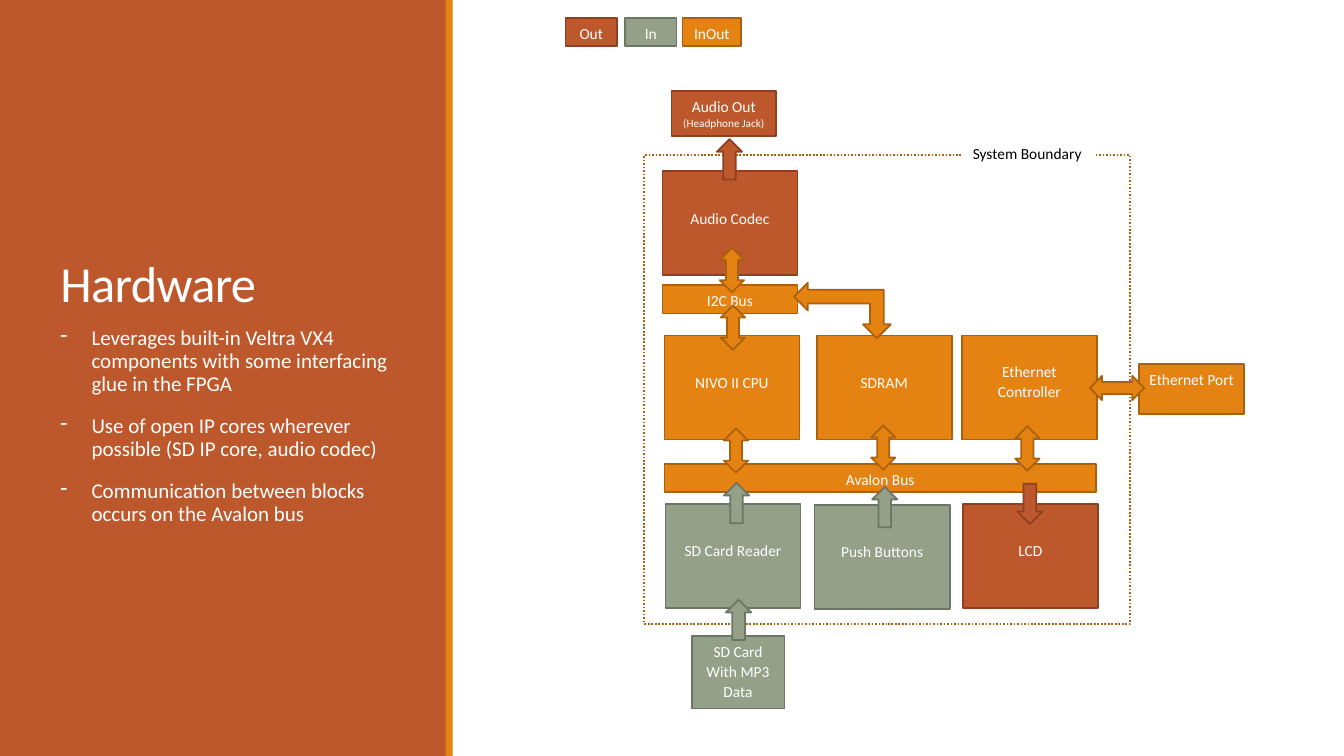
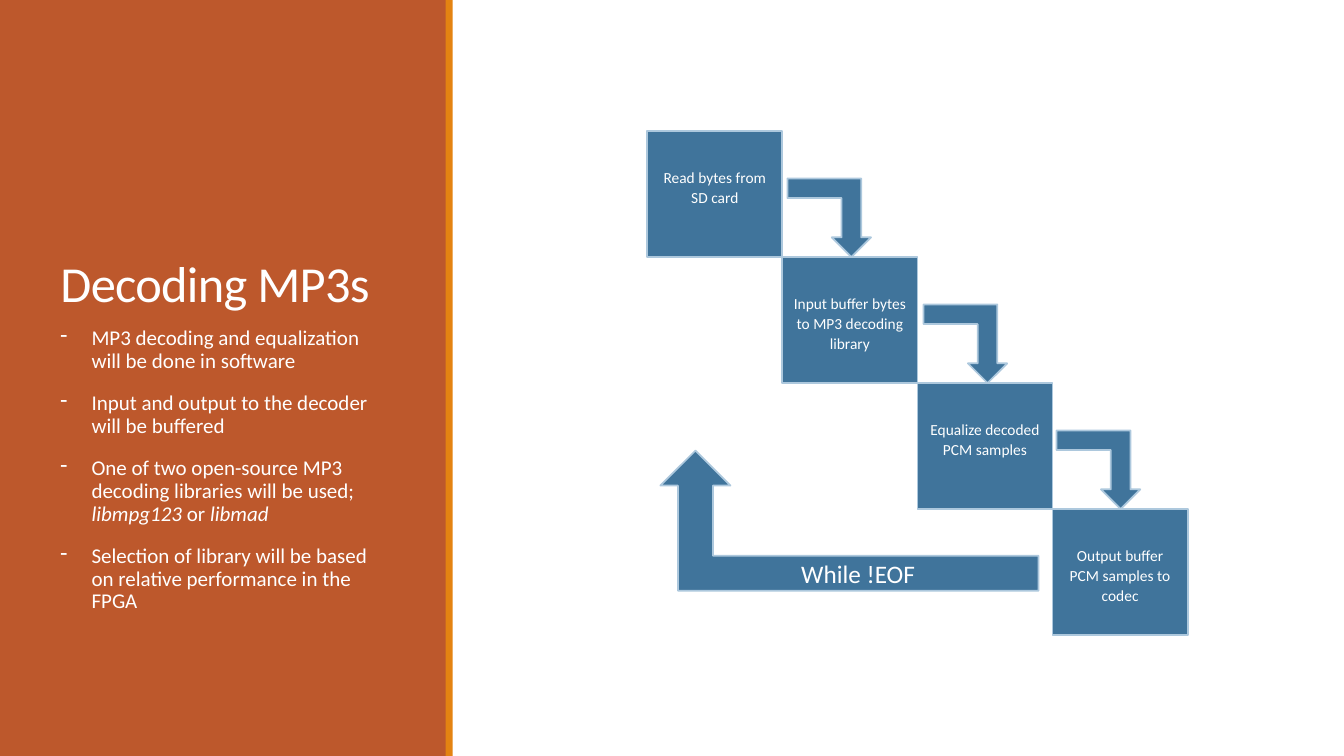
import pptx
import pptx.dml.color
import pptx.enum.dml
import pptx.enum.shapes
import pptx.enum.text
import pptx.oxml
import pptx.oxml.ns
import pptx.util

Inches = pptx.util.Inches
Pt = pptx.util.Pt
SHAPE = pptx.enum.shapes.MSO_SHAPE
ALIGN = pptx.enum.text.PP_ALIGN
ANCHOR = pptx.enum.text.MSO_ANCHOR

FONT = "Calibri"
WHITE, BLACK = "FFFFFF", "000000"
RUST, AMBER = "BD582C", "E48312"
OUT = (RUST, "8C4121")
IN = ("94A088", "6D7665")
INOUT = (AMBER, "A9610D")
STEP = ("40749B", "ADC8DD")

BLOCK_W, BLOCK_H, BUS_H = 1.34, 1.03, 0.28
BLOCK_TOP = 0.36

HARDWARE_POINTS = [
    ("Leverages built-in Veltra VX4 components with some interfacing glue in the FPGA",),
    ("Use of open IP cores wherever possible (SD IP core, audio codec)",),
    ("Communication between blocks occurs on the Avalon bus",),
]
DECODING_POINTS = [
    ("MP3 decoding and equalization will be done in software",),
    ("Input and output to the decoder will be buffered",),
    ("One of two open-source MP3 decoding libraries will be used; ", "libmpg123 ", "or ", "libmad"),
    ("Selection of library will be based on relative performance in the FPGA",),
]

BLOCKS = [
    ("NIVO II CPU", INOUT, 6.59, 3.33, BLOCK_TOP),
    ("SDRAM", INOUT, 8.1, 3.33, BLOCK_TOP),
    ("Ethernet Controller", INOUT, 9.54, 3.33, 0.25),
    ("Audio Codec", OUT, 6.57, 1.7, BLOCK_TOP),
    ("SD Card Reader", IN, 6.6, 5, BLOCK_TOP),
    ("Push Buttons", IN, 8.08, 5.01, BLOCK_TOP),
    ("LCD", OUT, 9.55, 5, BLOCK_TOP),
]
LABELS = [
    (["Avalon Bus"], INOUT, (6.59, 4.6, 4.28, BUS_H)),
    (["I2C Bus"], INOUT, (6.57, 2.83, BLOCK_W, BUS_H)),
    (["SD Card", "With MP3 Data"], IN, (6.86, 6.31, 0.92, 0.72)),
    (["Audio Out", "(Headphone Jack)"], OUT, (6.66, 0.9, 1.04, 0.45)),
    (["Ethernet Port"], INOUT, (11.3, 3.61, 1.04, 0.5)),
    (["Out"], OUT, (5.61, 0.18, 0.51, BUS_H)),
    (["In"], IN, (6.2, 0.18, 0.51, BUS_H)),
    (["InOut"], INOUT, (6.77, 0.18, 0.58, BUS_H)),
]
TWO_WAY_ARROWS = [(7.14, 2.46), (7.15, 3.03), (7.18, 4.25), (8.64, 4.22), (10.07, 4.23)]
ONE_WAY_ARROWS = [
    (OUT, 10.09, 4.8, 0),
    (OUT, 7.11, 1.38, 180),
    (IN, 8.65, 4.83, 180),
    (IN, 7.18, 4.79, 180),
    (IN, 7.2, 5.95, 180),
]
STEPS = [
    "Read bytes from SD card",
    "Input buffer bytes to MP3 decoding library",
    "Equalize decoded PCM samples",
    "Output buffer PCM samples to codec",
]


def color(value):
    return pptx.dml.color.RGBColor.from_string(value)


def set_attrs(obj, **values):
    for name, value in values.items():
        setattr(obj, name, value)


def place(sp, left, top, width, height):
    set_attrs(sp, left=Inches(left), top=Inches(top), width=Inches(width), height=Inches(height))


def set_frame(tf, anchor=ANCHOR.TOP, top=0.05, side=0.1):
    set_attrs(tf, word_wrap=True, auto_size=pptx.enum.text.MSO_AUTO_SIZE.NONE, vertical_anchor=anchor,
              margin_left=Inches(side), margin_right=Inches(side),
              margin_top=Inches(top), margin_bottom=Inches(0.05))


def add_run(p, text, size, hex_color=WHITE, italic=False):
    r = p.add_run()
    r.text = text
    set_attrs(r.font, name=FONT, size=Pt(size), italic=italic)
    r.font.color.rgb = color(hex_color)
    return r


def add_paragraph(tf, first):
    return tf.paragraphs[0] if first else tf.add_paragraph()


def add_shape(s, kind, box, fill=None, line=None, rotation=0):
    sp = s.shapes.add_shape(kind, *map(Inches, box))
    sp.shadow.inherit = False
    sp.rotation = rotation
    if fill:
        sp.fill.solid()
        sp.fill.fore_color.rgb = color(fill)
    else:
        sp.fill.background()
    if line:
        sp.line.color.rgb = color(line)
        sp.line.width = Pt(1.25)
    else:
        sp.line.fill.background()
    return sp


def write_lines(sp, lines, sizes=(11, 11), hex_color=WHITE, align=ALIGN.CENTER, spacing=1.07, **frame):
    tf = sp.text_frame
    set_frame(tf, **frame)
    for i, (text, size) in enumerate(zip(lines, sizes)):
        p = add_paragraph(tf, i == 0)
        set_attrs(p, alignment=align, line_spacing=spacing)
        add_run(p, text, size, hex_color)


def flip(sp, axis):
    sp.element.spPr.get_or_add_xfrm().set(axis, "1")


def add_bands(s):
    bands = [((0, 0, 4.43, 7.5), RUST), ((4.42, 0, 0.07, 7.5), AMBER)]
    for i, (box, fill) in enumerate(bands):
        sp = add_shape(s, SHAPE.RECTANGLE, box, fill)
        sp.element.nvSpPr.cNvPr.set("id", str(101 + i))
        s.slide_layout.shapes.element.insert(2 + i, sp.element)


def add_title(s, text):
    sp = s.shapes.title
    place(sp, 0.5, 0.65, 3.5, 2.5)
    set_frame(sp.text_frame, ANCHOR.BOTTOM)
    p = sp.text_frame.paragraphs[0]
    set_attrs(p, alignment=ALIGN.LEFT, line_spacing=0.85)
    r = add_run(p, text, 36)
    r._r.get_or_add_rPr().set("spc", "-50")


def add_bullets(s, points):
    tf = s.shapes.add_textbox(*map(Inches, (0.5, 3.2, 3.5, 3.7))).text_frame
    set_frame(tf)
    for i, point in enumerate(points):
        p = add_paragraph(tf, i == 0)
        pPr = p._p.get_or_add_pPr()
        pPr.set("marL", str(Inches(0.31)))
        pPr.set("indent", str(-Inches(0.31)))
        bullet = pptx.oxml.parse_xml('<a:buChar %s char="-"/>' % pptx.oxml.ns.nsdecls("a"))
        pPr.append(bullet)
        set_attrs(p, line_spacing=0.9, space_before=Pt(12 if i else 0), space_after=Pt(2))
        for j, text in enumerate(point):
            add_run(p, text, 15, italic=j % 2 == 1)


def add_slide(prs, title, points):
    s = prs.slides.add_slide(prs.slide_layouts[5])
    add_title(s, title)
    add_bullets(s, points)
    return s


def add_boundary(s):
    sp = add_shape(s, SHAPE.RECTANGLE, (6.39, 1.54, 4.82, 4.65), line=INOUT[1])
    sp.line.dash_style = pptx.enum.dml.MSO_LINE.ROUND_DOT
    sp = add_shape(s, SHAPE.RECTANGLE, (9.55, 1.37, 1.3, 0.34), WHITE)
    write_lines(sp, ["System Boundary"], hex_color=BLACK, align=ALIGN.LEFT)


def add_hardware_diagram(s):
    add_boundary(s)
    for text, style, left, top, inset in BLOCKS:
        sp = add_shape(s, SHAPE.RECTANGLE, (left, top, BLOCK_W, BLOCK_H), *style)
        write_lines(sp, [text], top=inset)
    for lines, style, box in LABELS:
        sp = add_shape(s, SHAPE.RECTANGLE, box, *style)
        sizes = (11, 8) if "(Headphone Jack)" in lines else (11, 11)
        write_lines(sp, lines, sizes, side=0.05)
    for left, top in TWO_WAY_ARROWS:
        add_shape(s, SHAPE.UP_DOWN_ARROW, (left, top, 0.24, 0.44), *INOUT)
    for style, left, top, rotation in ONE_WAY_ARROWS:
        add_shape(s, SHAPE.DOWN_ARROW, (left, top, 0.25, 0.4), *style, rotation=rotation)
    add_shape(s, SHAPE.UP_DOWN_ARROW, (10.96, 3.58, 0.24, 0.54), *INOUT, rotation=90)
    add_shape(s, SHAPE.LEFT_UP_ARROW, (8.08, 2.6, 0.55, 0.96), *INOUT, rotation=270)


def add_decoding_steps(s):
    step_h = 1.25
    for i, text in enumerate(STEPS):
        left, top = 6.42 + i * BLOCK_W, 1.3 + i * step_h
        sp = add_shape(s, SHAPE.RECTANGLE, (left, top, BLOCK_W, step_h), *STEP)
        write_lines(sp, [text], top=BLOCK_TOP)
    for i, left in enumerate((7.81, 9.16, 10.48)):
        sp = add_shape(s, SHAPE.BENT_UP_ARROW, (left, 1.77 + i * step_h, 0.83, 0.78), *STEP)
        flip(sp, "flipV")
    sp = add_shape(s, SHAPE.BENT_UP_ARROW, (6.55, 4.47, 3.75, 1.39), *STEP)
    flip(sp, "flipH")
    write_lines(sp, ["While !EOF"], (18,), spacing=1.0, anchor=ANCHOR.MIDDLE)


def main():
    prs = pptx.Presentation()
    set_attrs(prs, slide_width=Inches(13.33), slide_height=Inches(7.5))
    hardware = add_slide(prs, "Hardware", HARDWARE_POINTS)
    add_bands(hardware)
    add_hardware_diagram(hardware)
    decoding = add_slide(prs, "Decoding MP3s", DECODING_POINTS)
    add_decoding_steps(decoding)
    prs.save("out.pptx")


if __name__ == "__main__":
    main()
